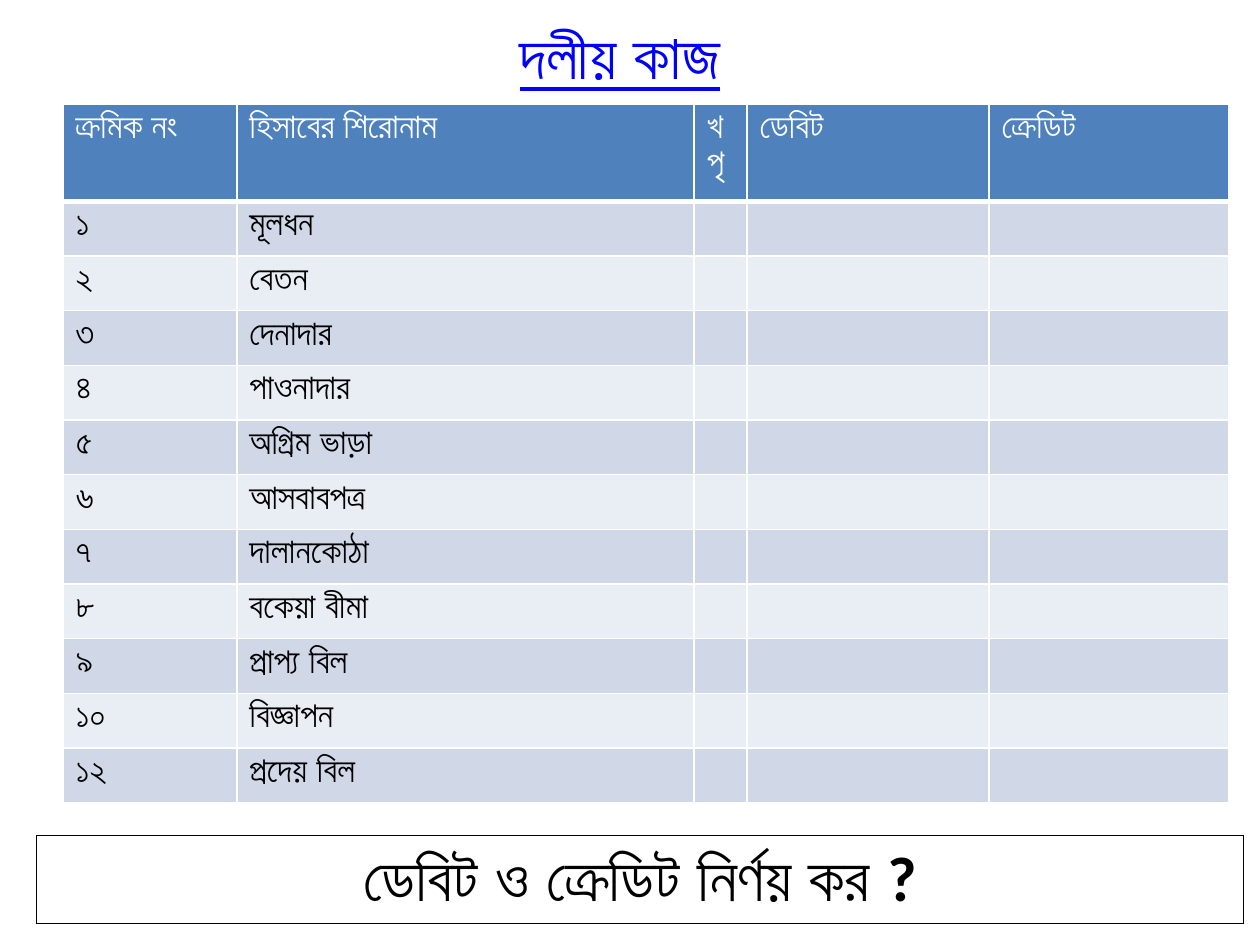
import pptx
import pptx.dml.color
import pptx.enum.text
import pptx.oxml
import pptx.oxml.ns
import pptx.util

Inches = pptx.util.Inches
CENTER = pptx.enum.text.PP_ALIGN.CENTER
THIN_SIDES = dict.fromkeys("LRTB", 1)

HEADINGS = ["ক্রমিক নং", "হিসাবের শিরোনাম", "খ\nপৃ", "ডেবিট", "ক্রেডিট"]
ACCOUNTS = [
    ("১", "মূলধন"),
    ("২", "বেতন"),
    ("৩", "দেনাদার"),
    ("৪", "পাওনাদার"),
    ("৫", "অগ্রিম ভাড়া"),
    ("৬", "আসবাবপত্র"),
    ("৭", "দালানকোঠা"),
    ("৮", "বকেয়া বীমা"),
    ("৯", "প্রাপ্য বিল"),
    ("১০", "বিজ্ঞাপন"),
    ("১২", "প্রদেয় বিল"),
]
COLUMN_WIDTHS = [1.38, 3.63, 0.42, 1.92, 1.9]
HEADING_HEIGHT = 0.76


def rgb(color):
    return pptx.dml.color.RGBColor.from_string(color)


def write_text(frame, text, color, align=None, **formats):
    frame.text = text
    for paragraph in frame.paragraphs:
        paragraph.alignment = align
        for run in paragraph.runs:
            run.font.color.rgb = rgb(color)
            for key, value in {"name": "Calibri", **formats}.items():
                setattr(run.font, key, value)


def draw_borders(cell, color, widths):
    properties = cell._tc.get_or_add_tcPr()
    for side, width in widths.items():
        properties.append(pptx.oxml.parse_xml(
            f'<a:ln{side} {pptx.oxml.ns.nsdecls("a")} w="{pptx.util.Pt(width)}">'
            f'<a:solidFill><a:srgbClr val="{color}"/></a:solidFill></a:ln{side}>'))


def add_grid(slide, box, widths, heights):
    grid = slide.shapes.add_table(len(heights), len(widths), *map(Inches, box)).table
    grid.first_row = grid.horz_banding = False
    for column, width in zip(grid.columns, widths):
        column.width = Inches(width)
    for row, height in zip(grid.rows, heights):
        row.height = Inches(height)
    return grid


def add_title(slide, box):
    frame = slide.shapes.add_textbox(*map(Inches, box)).text_frame
    frame.word_wrap = True
    frame.auto_size = pptx.enum.text.MSO_AUTO_SIZE.SHAPE_TO_FIT_TEXT
    write_text(frame, "দলীয় কাজ", "0000FF", CENTER,
               size=pptx.util.Pt(36), bold=True, underline=True)


def add_ledger(slide, box):
    account_height = (box[3] - HEADING_HEIGHT) / len(ACCOUNTS)
    heights = [HEADING_HEIGHT] + [account_height] * len(ACCOUNTS)
    ledger = add_grid(slide, box, COLUMN_WIDTHS, heights)
    entries = [HEADINGS] + [(*account, "", "", "") for account in ACCOUNTS]
    for index, (row, texts) in enumerate(zip(ledger.rows, entries)):
        heading = index == 0
        fill = "4F81BD" if heading else ("E9EDF4", "D0D8E8")[index % 2]
        borders = {**THIN_SIDES, "B": 3} if heading else THIN_SIDES
        for cell, text in zip(row.cells, texts):
            draw_borders(cell, "FFFFFF", borders)
            cell.fill.solid()
            cell.fill.fore_color.rgb = rgb(fill)
            if text:
                write_text(cell.text_frame, text, "FFFFFF" if heading else "000000",
                           size=pptx.util.Pt(20), bold=not heading)


def add_question(slide, box):
    cell = add_grid(slide, box, [box[2]], [box[3]]).cell(0, 0)
    draw_borders(cell, "000000", THIN_SIDES)
    cell.fill.background()
    write_text(cell.text_frame, "ডেবিট ও ক্রেডিট নির্ণয় কর ?", "000000", CENTER,
               size=pptx.util.Pt(36), bold=True)


def main():
    deck = pptx.Presentation()
    deck.slide_width, deck.slide_height = Inches(10), Inches(7.5)
    slide = deck.slides.add_slide(deck.slide_layouts[6])
    add_title(slide, (2.42, 0.08, 5, 0.71))
    add_ledger(slide, (0.5, 0.83, 9.25, 5.53))
    add_question(slide, (0.29, 6.63, 9.58, 0.7))
    deck.save("out.pptx")


if __name__ == "__main__":
    main()
